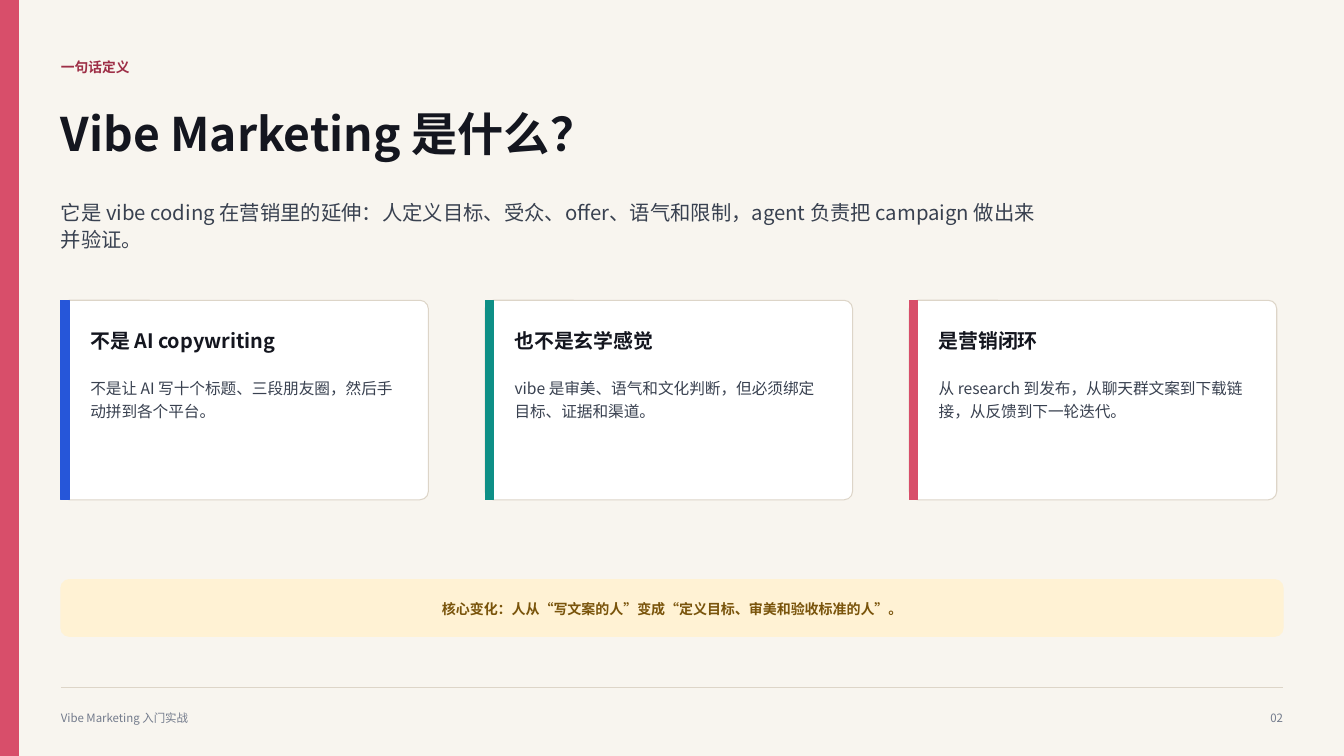
from pptx import Presentation
from pptx import util as u
from pptx.dml.color import RGBColor
from pptx.enum import shapes, text
from pptx.oxml.ns import qn
from lxml import etree

PX = 9525
FONT = "Noto Sans CJK SC"
PAPER, WHITE, RULE = "F8F5EF", "FFFFFF", "DDD5C8"
INK, BODY, MUTED = "14161F", "394150", "737B8C"
ROSE, DARK_ROSE, BLUE, TEAL = "D84E6A", "9E2F47", "2656D9", "0E8F86"
CREAM, BROWN = "FFF2D4", "79540B"
LEFT, WIDTH = 58, 1164

CARDS = [
    (BLUE, "不是 AI copywriting", "不是让 AI 写十个标题、三段朋友圈，然后手动拼到各个平台。"),
    (TEAL, "也不是玄学感觉", "vibe 是审美、语气和文化判断，但必须绑定目标、证据和渠道。"),
    (ROSE, "是营销闭环", "从 research 到发布，从聊天群文案到下载链接，从反馈到下一轮迭代。"),
]


def px(*lengths):
    return [u.Emu(n * PX) for n in lengths]


def rgb(color):
    return RGBColor.from_string(color)


def add_box(s, x, y, w, h, fill, line=None, radius=0):
    kind = shapes.MSO_SHAPE.ROUNDED_RECTANGLE if radius else shapes.MSO_SHAPE.RECTANGLE
    sp = s.shapes.add_shape(kind, *px(x, y, w, h))
    if radius:
        sp.adjustments[0] = radius / min(w, h)
    sp.shadow.inherit = False
    sp.fill.solid()
    sp.fill.fore_color.rgb = rgb(fill)
    sp.line.color.rgb = rgb(line or fill)
    sp.line.width = u.Pt(0.75)


def add_text(s, x, y, w, h, words, size, color, bold=False, align="LEFT", spacing=1.12):
    tf = s.shapes.add_textbox(*px(x, y, w, h)).text_frame
    tf.word_wrap = True
    tf.margin_left = tf.margin_top = tf.margin_right = tf.margin_bottom = 0
    p = tf.paragraphs[0]
    p.text = words
    p.alignment = text.PP_ALIGN[align]
    p.line_spacing = spacing
    p.font.name = FONT
    p.font.size = u.Centipoints(round(size * 100))
    p.font.bold = bold
    p.font.color.rgb = rgb(color)
    # East Asian glyphs take their typeface from a:ea
    latin = p._p.pPr.find(qn("a:defRPr")).find(qn("a:latin"))
    ea = etree.Element(qn("a:ea"), typeface=FONT)
    latin.addnext(ea)


def add_heading(s, x, y):
    add_text(s, x, y, 860, 24, "一句话定义", 9.8, DARK_ROSE, bold=True)
    add_text(s, x, y + 50, 820, 58, "Vibe Marketing 是什么？", 33, INK, bold=True, spacing=0.96)
    add_text(s, x, y + 134, 940, 52,
             "它是 vibe coding 在营销里的延伸：人定义目标、受众、offer、语气和限制，"
             "agent 负责把 campaign 做出来并验证。", 14.5, BODY)


def add_card(s, x, y, w, h, accent, title, body):
    add_box(s, x, y, w, h, WHITE, RULE, radius=8)
    add_box(s, x, y, 8, h, accent)
    add_text(s, x + 28, y + 24, w - 48, 28, title, 14.2, INK, bold=True)
    add_text(s, x + 28, y + 72, w - 56, h - 84, body, 11.2, BODY, spacing=1.18)


def add_banner(s, x, y, w, h):
    add_box(s, x, y, w, h, CREAM, radius=8)
    add_text(s, x + 26, y + 18, w - 52, h - 36,
             "核心变化：人从“写文案的人”变成“定义目标、审美和验收标准的人”。",
             10, BROWN, bold=True, align="CENTER")


def add_footer(s, x, y, w):
    rule = s.shapes.add_connector(shapes.MSO_CONNECTOR.STRAIGHT, *px(x, y, x + w, y))
    rule.line.color.rgb = rgb(RULE)
    rule.line.width = u.Pt(0.75)
    etree.SubElement(rule._element.spPr, qn("a:effectLst"))
    add_text(s, x, y + 21, 520, 24, "Vibe Marketing 入门实战", 8.2, MUTED)
    add_text(s, x + w - 48, y + 21, 48, 24, "02", 8.2, MUTED, align="RIGHT")


def main():
    prs = Presentation()
    prs.slide_width, prs.slide_height = px(1280, 720)
    s = prs.slides.add_slide(prs.slide_layouts[6])
    s.background.fill.solid()
    s.background.fill.fore_color.rgb = rgb(PAPER)
    add_box(s, 0, 0, 18, 720, ROSE)
    add_footer(s, LEFT, 655, WIDTH)
    add_heading(s, LEFT, 54)
    for i, card in enumerate(CARDS):
        add_card(s, LEFT + i * 404, 286, 350, 190, *card)
    add_banner(s, LEFT, 552, WIDTH, 54)
    prs.save("out.pptx")


if __name__ == "__main__":
    main()
